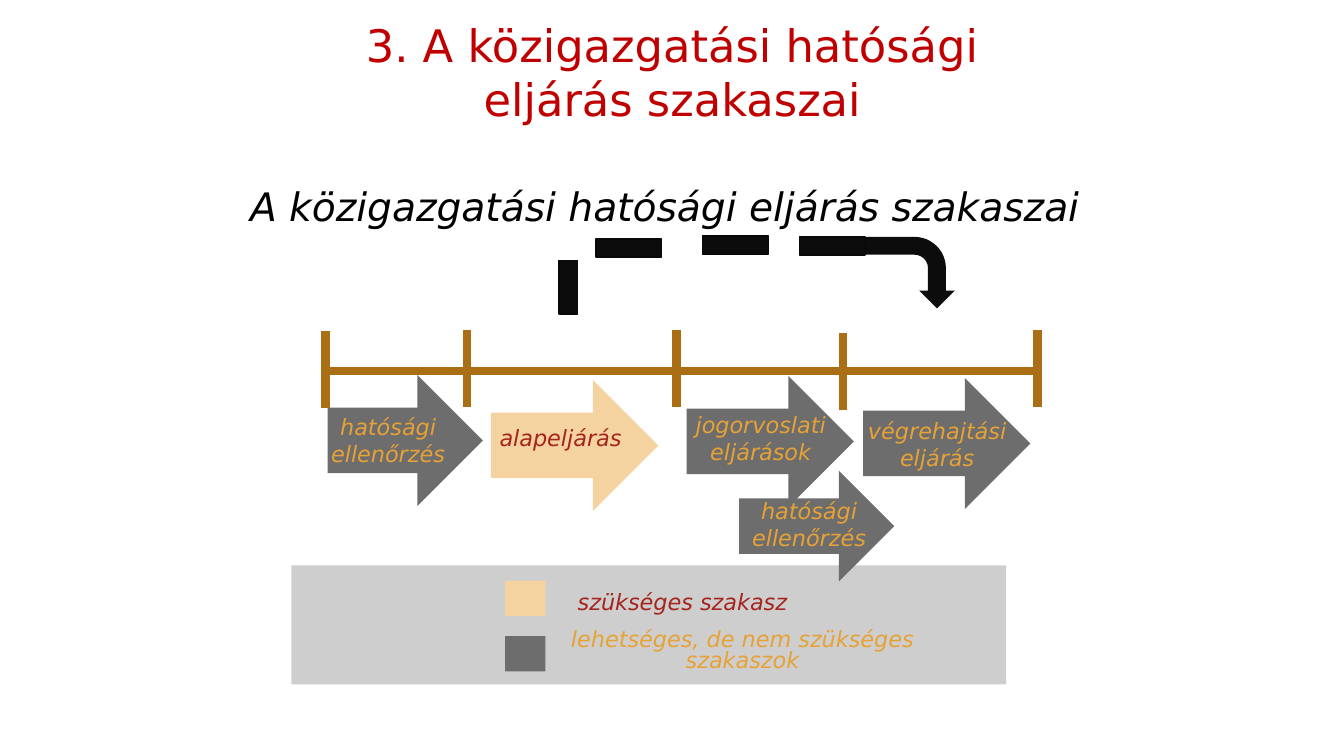
from dataclasses import dataclass

from lxml.etree import SubElement
from pptx import Presentation
from pptx.dml.color import RGBColor
from pptx.enum.shapes import MSO_CONNECTOR, MSO_SHAPE
from pptx.enum.text import MSO_ANCHOR, PP_ALIGN
from pptx.oxml.ns import qn
from pptx.util import Inches, Pt


@dataclass(frozen=True)
class Theme:
    """Colours, font and sizes of the slide."""
    font: str = "DejaVu Sans"
    title: str = "C00000"
    black: str = "000000"
    needed: str = "F5D3A1"
    needed_text: str = "A5241D"
    possible: str = "6D6D6D"
    possible_text: str = "E7A236"
    panel: str = "CECECE"
    axis: str = "AA6F14"
    bypass: str = "0C0C0C"
    bypass_edge: str = "090909"
    title_size: int = 32
    subtitle_size: int = 28
    label_size: int = 16
    axis_width: int = 6


T = Theme()


def add_text(s, box, lines, color, size=T.label_size, italic=True,
             align=PP_ALIGN.CENTER, anchor=MSO_ANCHOR.MIDDLE, spacing=None):
    """Place a text box with one paragraph per line."""
    tf = s.shapes.add_textbox(*map(Inches, box)).text_frame
    tf.word_wrap = True
    tf.vertical_anchor = anchor
    tf.margin_left = tf.margin_right = Inches(0.07)
    tf.margin_top = tf.margin_bottom = Inches(0.04)
    tf.text = "\n".join(lines)
    for p in tf.paragraphs:
        p.alignment = align
        p.line_spacing = spacing
        for r in p.runs:
            r.font.name, r.font.size = T.font, Pt(size)
            r.font.italic = italic
            r.font.color.rgb = RGBColor.from_string(color)


def add_block(s, kind, box, fill, edge=None, rotation=0):
    """Place a flat preset shape."""
    sp = s.shapes.add_shape(kind, *map(Inches, box))
    sp.shadow.inherit = False
    sp.rotation = rotation
    sp.fill.solid()
    sp.fill.fore_color.rgb = RGBColor.from_string(fill)
    if edge:
        sp.line.color.rgb = RGBColor.from_string(edge)
        sp.line.width = Pt(1)
    else:
        sp.line.fill.background()


def add_axis_line(s, x1, y1, x2, y2):
    """Draw one straight stroke of the timeline."""
    line = s.shapes.add_connector(MSO_CONNECTOR.STRAIGHT,
                                  *map(Inches, (x1, y1, x2, y2)))
    line.line.color.rgb = RGBColor.from_string(T.axis)
    line.line.width = Pt(T.axis_width)
    SubElement(line._element.spPr, qn("a:effectLst"))


def add_headings(s, x, y, w):
    """Place the title and the subtitle below it."""
    add_text(s, (x, y, w, 1.18),
             ["3. A közigazgatási hatósági", "eljárás szakaszai"],
             T.title, T.title_size, italic=False, anchor=MSO_ANCHOR.TOP)
    add_text(s, (x + 0.74, y + 1.63, 8.84, 0.59),
             ["A közigazgatási hatósági eljárás szakaszai"],
             T.black, T.subtitle_size, align=PP_ALIGN.LEFT,
             anchor=MSO_ANCHOR.TOP)


def add_legend(s, x, y, w, h):
    """Place the grey panel with its two keys."""
    add_block(s, MSO_SHAPE.RECTANGLE, (x, y, w, h), T.panel)
    for dy, fill in ((0.15, T.needed), (0.7, T.possible)):
        add_block(s, MSO_SHAPE.RECTANGLE, (x + 2.12, y + dy, 0.4, 0.35), fill)
    add_text(s, (x + 2.77, y + 0.09, 2.36, 0.59), ["szükséges szakasz"],
             T.needed_text, align=PP_ALIGN.LEFT, spacing=0.8)
    add_text(s, (x + 2.44, y + 0.56, 4.07, 0.59),
             ["lehetséges, de nem szükséges", "szakaszok"],
             T.possible_text, spacing=0.8)


def add_stage(s, x, y, w, h, label, dx, dy, label_w, needed=False):
    """Place a stage arrow with its label offset from the corner."""
    fill, color = ((T.needed, T.needed_text) if needed
                   else (T.possible, T.possible_text))
    add_block(s, MSO_SHAPE.RIGHT_ARROW, (x, y, w, h), fill)
    add_text(s, (x + dx, y + dy, label_w, 0.59), [label], color)


def add_timeline(s, x, y, w, h):
    """Draw the axis and the ticks that bound the stages."""
    add_axis_line(s, x, y + 0.41, x + w, y + 0.41)
    for dx, dy in ((0, 0.01), (1.4, 0), (3.48, 0), (5.13, 0.03), (7.06, 0)):
        add_axis_line(s, x + dx, y + dy, x + dx, y + dy + h)


def add_bypass(s, x, y):
    """Draw the dashed path that ends in a bent arrow."""
    dashes = ((0, 0.42, 0.53, 90), (0.54, 0.03, 0.65, 0),
              (1.6, 0, 0.65, 0), (2.56, 0.01, 0.65, 0))
    for dx, dy, w, rotation in dashes:
        add_block(s, MSO_SHAPE.RECTANGLE, (x + dx, y + dy, w, 0.18),
                  T.bypass, T.bypass_edge, rotation)
    add_block(s, MSO_SHAPE.BENT_ARROW, (x + 3.3, y - 0.08, 0.71, 0.89),
              T.bypass, rotation=90)


def main():
    """Build the slide and save it."""
    prs = Presentation()
    prs.slide_width, prs.slide_height = Inches(13.33), Inches(7.5)
    s = prs.slides.add_slide(prs.slide_layouts[6])
    add_headings(s, 1.67, 0.14, 10)
    add_legend(s, 2.89, 5.61, 7.09, 1.18)
    check = "hatósági ellenőrzés"
    add_stage(s, 3.25, 3.72, 1.54, 1.3, check, -0.14, 0.35, 1.48)
    add_stage(s, 4.87, 3.77, 1.66, 1.3, "alapeljárás", -0.05, 0.28, 1.48,
              needed=True)
    add_stage(s, 6.81, 3.73, 1.66, 1.3, "jogorvoslati eljárások",
              -0.04, 0.32, 1.55)
    add_stage(s, 8.56, 3.75, 1.66, 1.3, "végrehajtási eljárás",
              -0.06, 0.36, 1.59)
    add_stage(s, 7.33, 4.67, 1.54, 1.1, check, -0.01, 0.23, 1.41)
    add_timeline(s, 3.23, 3.27, 7.09, 0.77)
    add_bypass(s, 5.37, 2.34)
    prs.save("out.pptx")


if __name__ == "__main__":
    main()
